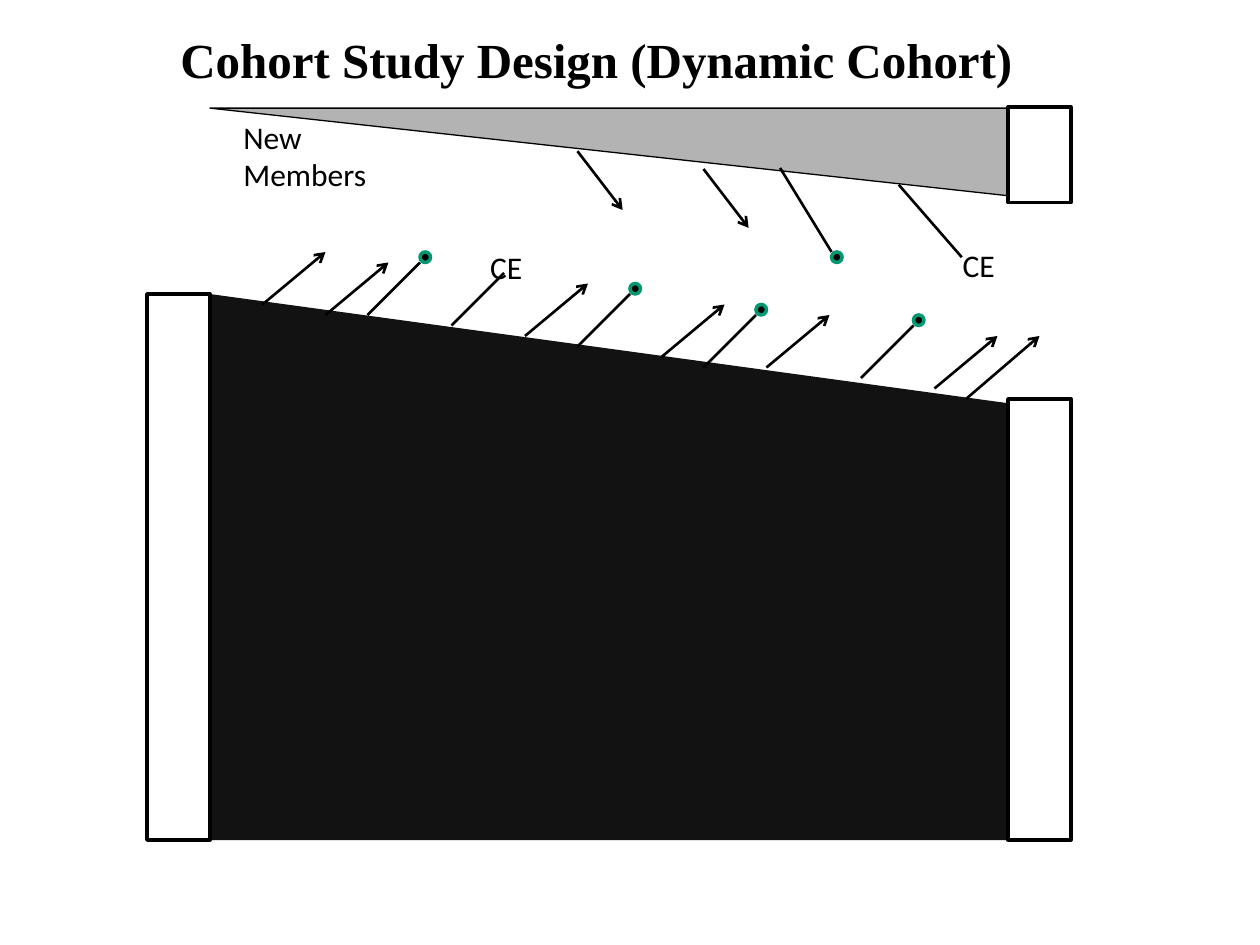
from pptx import Presentation
from pptx import util as u
from pptx.dml.color import RGBColor
from pptx.enum import shapes, text
from pptx.oxml import ns
from lxml import etree

# Grid: 120 columns by 90 rows, twelve to the inch
deck = Presentation()
deck.slide_width, deck.slide_height = u.Inches(10), u.Inches(7.5)
cell = deck.slide_width / 120
page = deck.slides.add_slide(deck.slide_layouts[6])
kind = shapes.MSO_SHAPE


def color(part, hue):
    part.fore_color.rgb = RGBColor.from_string(hue)


def draw(form, box, fill, line, width):
    item = page.shapes.add_shape(form, *[round(n * cell) for n in box])
    item.shadow.inherit = False
    if fill:
        item.fill.solid()
        color(item.fill, fill)
    else:
        item.fill.background()
    if line:
        item.line.fill.solid()
        color(item.line.fill, line)
        item.line.width = u.Pt(width)
    else:
        item.line.fill.background()
    return item


# Cohort block, sloping down to the right, and its end bars
block = draw(kind.FLOWCHART_MANUAL_INPUT, (20, 28, 76, 52), "121212", None, 0)
block._element.spPr.xfrm.set("flipH", "1")
draw(kind.RECTANGLE, (96, 38, 6, 42), None, "000000", 2)
draw(kind.RECTANGLE, (14, 28, 6, 52), None, "000000", 2)

# New members wedge and its end bar
wedge = draw(kind.RIGHT_TRIANGLE, (20, 10.3, 82, 9), "B3B3B3", "000000", 0.75)
wedge.rotation = 180
draw(kind.RECTANGLE, (96, 10.2, 6, 9.1), "FFFFFF", "000000", 2)

# Lines: start column, start row, end column, end row
leave = [
    (25, 29, 31, 24), (31, 30, 37, 25), (50, 32, 56, 27), (63, 34, 69, 29),
    (73, 35, 79, 30), (89, 37, 95, 32), (92, 38, 99, 32),
    (55, 14.4, 59.3, 20), (67, 16.1, 71.3, 21.7),
]
cases = [
    (35, 30, 40, 25), (55, 33, 60, 28), (67, 35, 72, 30), (82, 36, 87, 31),
    (74.3, 16, 79.2, 24),
]
compete = [(43, 31, 48, 26), (85.6, 17.6, 91.6, 24.5)]
for ends in leave + cases + compete:
    line = page.shapes.add_connector(
        shapes.MSO_CONNECTOR.STRAIGHT, *[round(n * cell) for n in ends])
    line.line.fill.solid()
    color(line.line.fill, "000000")
    line.line.width = u.Pt(1.5)
    if ends in leave:
        etree.SubElement(line.line._get_or_add_ln(), ns.qn("a:tailEnd"), type="arrow")
    etree.SubElement(line._element.spPr, ns.qn("a:effectLst"))

# Case dots: above the end of a rising line, at the end of a falling one
for _, top, col, row in cases:
    dot = row - 1 if row < top else row
    draw(kind.OVAL, (col, dot, 1, 1), "000000", "009771", 2)

# Title and labels: words, box, font, size, bold, wrap
labels = [
    ("Cohort Study Design (Dynamic Cohort)", (16, 2.2, 84.2, 6.8),
     "Times New Roman", 28, True, False),
    ("New Members", (22, 10.6, 16, 8.5), "Calibri", 18, False, True),
    ("CE", (45.5, 23, 5.5, 4.8), "Calibri", 18, False, False),
    ("CE", (90.5, 22.8, 5.5, 4.8), "Calibri", 18, False, False),
]
for words, box, face, size, bold, wrap in labels:
    frame = page.shapes.add_textbox(*[round(n * cell) for n in box]).text_frame
    frame.text = words
    frame.word_wrap = wrap
    frame.auto_size = text.MSO_AUTO_SIZE.SHAPE_TO_FIT_TEXT
    font = frame.paragraphs[0].runs[0].font
    font.name, font.size, font.bold = face, u.Pt(size), bold
    font.color.rgb = RGBColor.from_string("000000")

deck.save("out.pptx")
